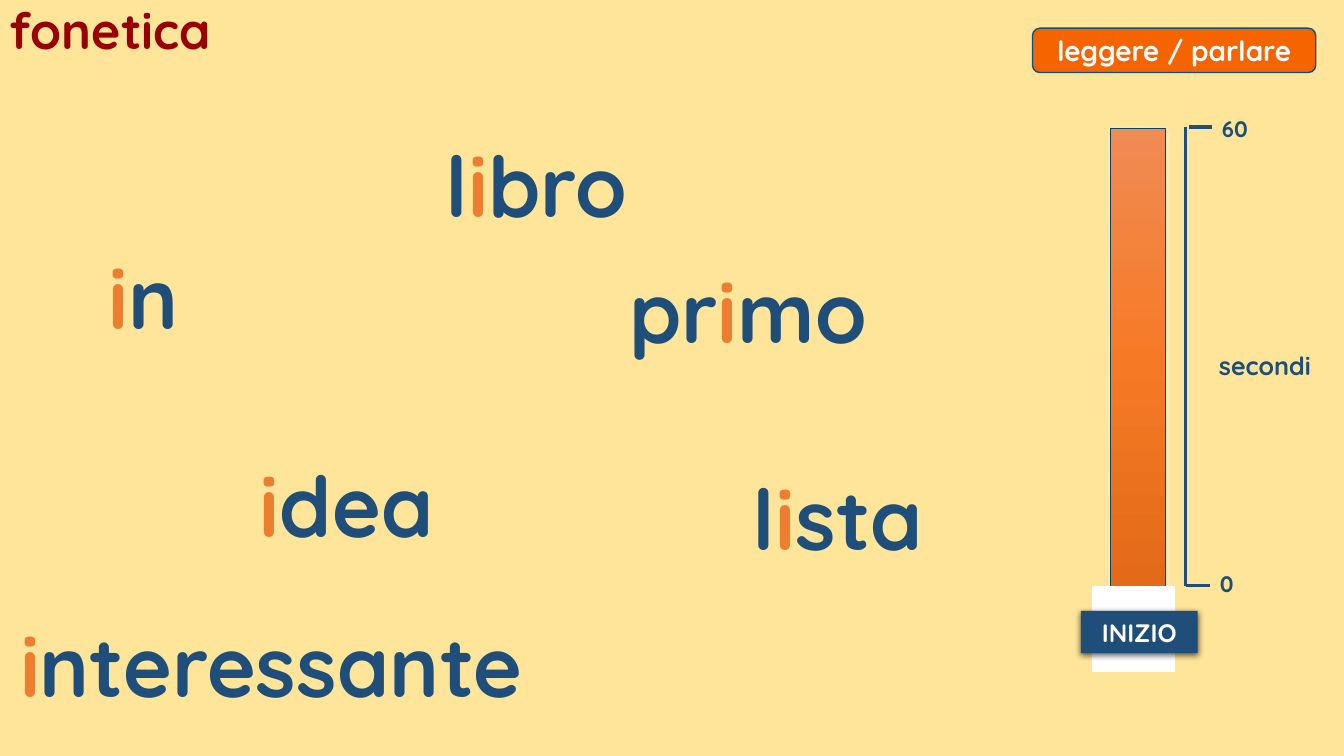
from copy import deepcopy

from lxml import etree
from pptx import Presentation
from pptx.dml.color import RGBColor
from pptx.enum.shapes import MSO_CONNECTOR, MSO_SHAPE
from pptx.enum.text import MSO_ANCHOR, PP_ALIGN
from pptx.oxml.ns import qn
from pptx.util import Pt

PX = 9144  # EMU; 100 px to the inch
SLIDE_WIDTH, SLIDE_HEIGHT = 1333, 750
FONT = "Quicksand"

CREAM = RGBColor(0xFE, 0xE5, 0x99)
DARK_RED = RGBColor(0x98, 0x00, 0x00)
ORANGE = RGBColor(0xF6, 0x64, 0x00)
VOWEL_ORANGE = RGBColor(0xED, 0x7D, 0x31)
NAVY = RGBColor(0x1E, 0x4E, 0x79)
BADGE_EDGE = RGBColor(0x11, 0x50, 0x76)
BAR_EDGE = RGBColor(0x02, 0x45, 0x6F)
WHITE = RGBColor(0xFF, 0xFF, 0xFF)
BLACK = RGBColor(0x00, 0x00, 0x00)
BAR_STOPS = [
    (0, RGBColor(0xF0, 0x8B, 0x54)),
    (0.5, RGBColor(0xF6, 0x7A, 0x26)),
    (1, RGBColor(0xE3, 0x6A, 0x18)),
]

LEFT, CENTER = PP_ALIGN.LEFT, PP_ALIGN.CENTER
TOP, MIDDLE = MSO_ANCHOR.TOP, MSO_ANCHOR.MIDDLE
RECTANGLE, ROUNDED = MSO_SHAPE.RECTANGLE, MSO_SHAPE.ROUNDED_RECTANGLE
STRAIGHT = MSO_CONNECTOR.STRAIGHT

VOWEL = "i"
WORDS = [
    ("in", (98, 239, 300, 111), LEFT),
    ("primo", (614, 253, 259, 111), LEFT),
    ("libro", (408, 128, 248, 111), CENTER),
    ("interessante", (10, 604, 521, 111), LEFT),
    ("lista", (707, 458, 248, 111), CENTER),
    ("idea", (248, 445, 300, 111), LEFT),
]


def emu(lengths):
    return [length * PX for length in lengths]


def write(shape, runs, size, align=LEFT, anchor=TOP, spacing=None):
    """Fill the shape with one paragraph of (text, colour) runs."""
    frame = shape.text_frame
    frame.word_wrap = True
    frame.vertical_anchor = anchor
    paragraph = frame.paragraphs[0]
    paragraph.alignment = align
    paragraph.line_spacing = spacing
    for text, color in runs:
        run = paragraph.add_run()
        run.text = text
        run.font.color.rgb = color
        for name, value in {"name": FONT, "size": Pt(size), "bold": True}.items():
            setattr(run.font, name, value)


def add_text(slide, box, runs, size, **layout):
    write(slide.shapes.add_textbox(*emu(box)), runs, size, **layout)


def add_block(slide, kind, box, fill, edge=None, width=1):
    shape = slide.shapes.add_shape(kind, *emu(box))
    shape.shadow.inherit = False
    shape.fill.solid()
    shape.fill.fore_color.rgb = fill
    if edge is None:
        shape.line.fill.background()
    else:
        shape.line.color.rgb = edge
        shape.line.width = Pt(width)
    return shape


def add_line(slide, start, end):
    line = slide.shapes.add_connector(STRAIGHT, *emu(start + end))
    line.line.color.rgb = NAVY
    line.line.width = Pt(2.25)
    etree.SubElement(line._element.spPr, qn("a:effectLst"))


def cast_shadow(shape, color):
    effects = shape._element.spPr.find(qn("a:effectLst"))
    shadow = etree.SubElement(
        effects, qn("a:outerShdw"), blurRad=str(Pt(4.5)), dist=str(Pt(1.5)),
        dir="5400000", rotWithShape="0")
    tint = etree.SubElement(shadow, qn("a:srgbClr"), val=str(color))
    etree.SubElement(tint, qn("a:alpha"), val="63000")


def shade_bar(bar):
    bar.fill.gradient()
    bar.fill.gradient_angle = 270
    stop_list = bar._element.spPr.find(qn("a:gradFill")).find(qn("a:gsLst"))
    stop_list.append(deepcopy(stop_list[-1]))
    for stop, (position, color) in zip(bar.fill.gradient_stops, BAR_STOPS):
        stop.position = position
        stop.color.rgb = color


def add_header(slide, box):
    left, top, width, _ = box
    add_text(slide, (left, top + 3, 223, 60), [("fonetica", DARK_RED)], 36,
             anchor=MIDDLE, spacing=0.9)
    badge = add_block(slide, ROUNDED, (left + width - 309, top + 28, 281, 44),
                      ORANGE, BADGE_EDGE)
    write(badge, [("leggere / parlare", WHITE)], 20, CENTER, MIDDLE)


def add_words(slide):
    for word, box, align in WORDS:
        before, vowel, after = word.partition(VOWEL)
        runs = [(before, NAVY), (vowel, VOWEL_ORANGE), (after, NAVY)]
        add_text(slide, box, [run for run in runs if run[0]], 60, align=align)


def add_timer(slide, box):
    left, top, _, height = box
    bar = add_block(slide, RECTANGLE, (left + 29, top + 1, 55, height),
                    ORANGE, BAR_EDGE, 0.75)
    shade_bar(bar)
    cast_shadow(bar, WHITE)

    axis, bottom = left + 104, top + height
    add_line(slide, (axis + 3, top), (axis + 26, top))
    add_line(slide, (axis, top), (axis, bottom))
    add_line(slide, (axis, bottom), (axis + 24, bottom))
    labels = [
        ("60", (axis + 26, top - 17, 47, 37), 16, LEFT),
        ("secondi", (axis, top + 217, 157, 40), 18, CENTER),
        ("0", (axis + 24, bottom - 20, 80, 37), 16, LEFT),
    ]
    for text, label_box, size, align in labels:
        add_text(slide, label_box, [(text, NAVY)], size, align=align)

    add_block(slide, RECTANGLE, (left + 12, bottom + 1, 81, 84), WHITE, WHITE)
    button = add_block(slide, RECTANGLE, (left, bottom + 25, 116, 42), NAVY)
    cast_shadow(button, BLACK)
    write(button, [("INIZIO", WHITE)], 18, CENTER, MIDDLE)


def main():
    presentation = Presentation()
    presentation.slide_width, presentation.slide_height = emu((SLIDE_WIDTH, SLIDE_HEIGHT))
    slide = presentation.slides.add_slide(presentation.slide_layouts[6])
    slide.background.fill.solid()
    slide.background.fill.fore_color.rgb = CREAM
    add_header(slide, (0, 0, SLIDE_WIDTH, 75))
    add_timer(slide, (1072, 126, 261, 455))
    add_words(slide)
    presentation.save("out.pptx")


if __name__ == "__main__":
    main()
